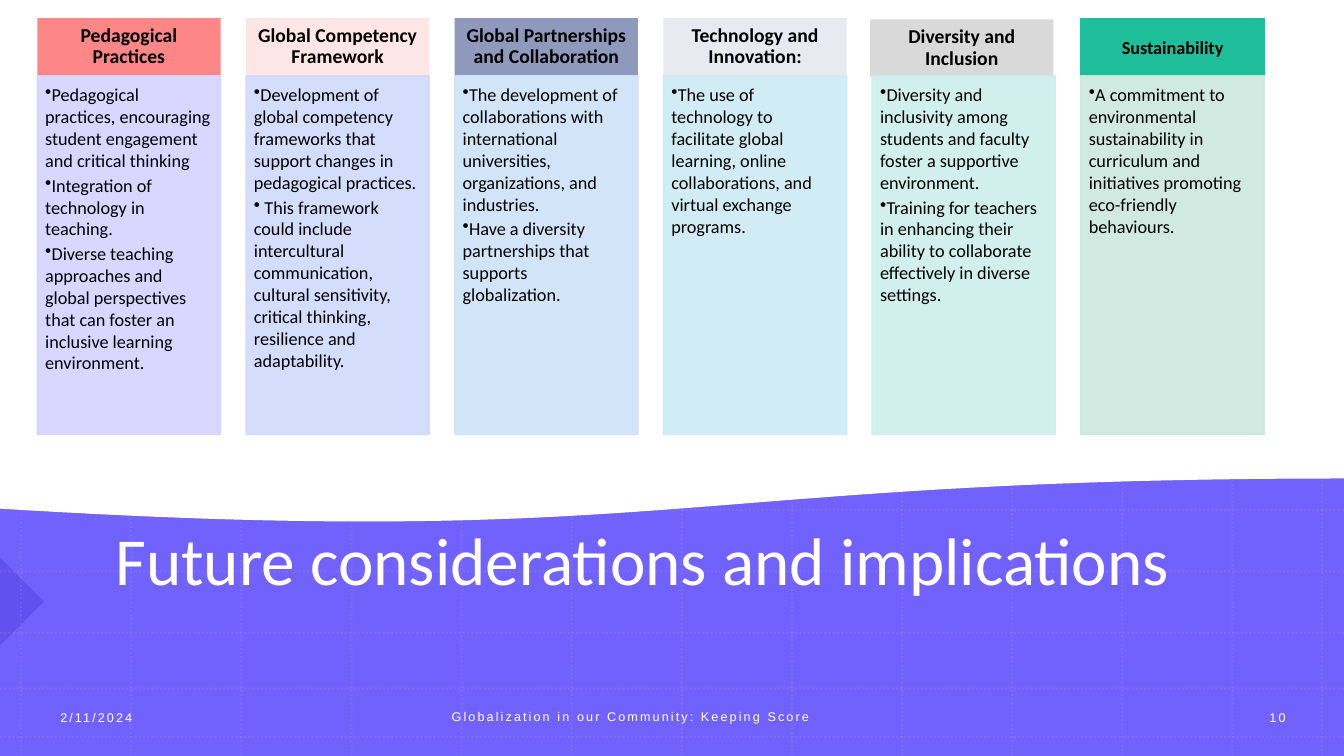
from pptx import Presentation
from pptx.dml.color import RGBColor
from pptx.enum.dml import MSO_LINE
from pptx.enum.shapes import MSO_CONNECTOR, MSO_SHAPE
from pptx.enum.text import MSO_ANCHOR, PP_ALIGN
from pptx.oxml.ns import qn
from pptx.util import Cm, Pt
from lxml import etree

RECT, TRI = MSO_SHAPE.RECTANGLE, MSO_SHAPE.RIGHT_TRIANGLE
LINE, DOT = MSO_CONNECTOR.STRAIGHT, MSO_LINE.ROUND_DOT
LEFT, MID = PP_ALIGN.LEFT, PP_ALIGN.CENTER
TOP, CENTER = MSO_ANCHOR.TOP, MSO_ANCHOR.MIDDLE

# Heading, heading fill and opacity, body fill, bullet points
COLUMNS = [
    ("Pedagogical Practices", "FD8686", 100, "D5D3FF", [
        "Pedagogical practices, encouraging student engagement and critical thinking",
        "Integration of technology in teaching.",
        "Diverse teaching approaches and global perspectives that can foster "
        "an inclusive learning environment."]),
    ("Global Competency Framework", "FD8686", 20, "D0DAFB", [
        "Development of global competency frameworks that support changes in "
        "pedagogical practices.",
        " This framework could include intercultural communication, cultural "
        "sensitivity, critical thinking, resilience and adaptability."]),
    ("Global Partnerships and Collaboration", "8F99BB", 100, "CEE3F8", [
        "The development of collaborations with international universities, "
        "organizations, and industries.",
        "Have a diversity partnerships that supports globalization."]),
    ("Technology and Innovation:", "8F99BB", 20, "CDEBF3", [
        "The use of technology to facilitate global learning, online "
        "collaborations, and virtual exchange programs."]),
    ("Diversity and Inclusion", "D9D9D9", 100, "CCEEEB", [
        "Diversity and inclusivity among students and faculty foster a "
        "supportive environment.",
        "Training for teachers in enhancing their ability to collaborate "
        "effectively in diverse settings."]),
    ("Sustainability", "1EBE9B", 100, "CCE8DE", [
        "A commitment to environmental sustainability in curriculum and "
        "initiatives promoting eco-friendly behaviours."]),
]
TITLE = "Future considerations and implications"
# Text, box in cm, alignment
FOOTER = [
    ("2/11/2024", (1.27, 17.58, 7.11, 1.02), LEFT),
    ("Globalization in our Community: Keeping Score", (9.04, 17.55, 13.69, 1.02), MID),
    ("10", (31.09, 17.58, 2.21, 1.02), MID),
]
THEME = {
    "band": "7162FE", "arrow": "1201AF", "grid": "B495C2", "paper": "FFFFFF",
    "title": {"name": "Calibri", "size": Pt(48), "color": "FFFFFF"},
    "head": {"name": "Calibri", "size": Pt(14), "bold": True, "color": "000000"},
    "short": {"name": "Calibri", "size": Pt(13), "bold": True, "color": "000000"},
    "body": {"name": "Calibri", "size": Pt(13), "color": "000000"},
    "foot": {"name": "Arial", "size": Pt(9), "color": "FFFFFF"},
}
WIDE, HIGH = 33.87, 19.05
COL_X, STEP, COL_W = 0.94, 5.26, 4.62
HEAD_Y, HEAD_H, BODY_Y, BODY_H = 0.46, 1.45, 1.91, 9.04
NUDGE = {4: (-0.05, 0.03)}
GRID_X, GRID_END, GRID_N = 0.53, 31.06, 12
ROWS = [12.85, 14.4, 15.95, 17.35, 18.57]
WAVE = [(33.91, 12.04), (17.02, 12.04), (16.92, 13.84), (0, 12.8)]
SMOOTH = 60


def paint(fill, color, alpha=100):
    """Make a solid fill with the given opacity in percent."""
    fill.solid()
    fill.fore_color.rgb = RGBColor.from_string(color)
    if alpha < 100:
        node = fill._xPr.find(qn("a:solidFill"))[0]
        etree.SubElement(node, qn("a:alpha")).set("val", str(alpha * 1000))


def block(slide, kind, box, color, alpha=100, edge=False):
    shape = slide.shapes.add_shape(kind, *map(Cm, box))
    shape.shadow.inherit = False
    paint(shape.fill, color, alpha)
    if edge:
        paint(shape.line.fill, color, alpha)
        shape.line.width = Pt(1)
    else:
        shape.line.fill.background()
    return shape


def write(shape, lines, style, para, frame):
    """Fill a shape with paragraphs; return them."""
    text = shape.text_frame
    for key, val in {"word_wrap": True, **frame}.items():
        setattr(text, key, val)
    for num, line in enumerate(lines):
        item = text.paragraphs[0] if num == 0 else text.add_paragraph()
        for key, val in para.items():
            setattr(item, key, val)
        run = item.add_run()
        run.text = line
        for key, val in style.items():
            if key == "color":
                run.font.color.rgb = RGBColor.from_string(val)
            else:
                setattr(run.font, key, val)
    return text.paragraphs


def label(slide, box, *args):
    return write(slide.shapes.add_textbox(*map(Cm, box)), *args)


def rule(slide, *ends):
    line = slide.shapes.add_connector(LINE, *map(Cm, ends))
    paint(line.line.fill, THEME["grid"], 20)
    line.line.width, line.line.dash_style = Pt(1.5), DOT
    etree.SubElement(line._element.spPr, qn("a:effectLst"))


def curve(step):
    """Point on the wave's cubic curve, in EMU."""
    t = step / SMOOTH
    parts = ((1 - t) ** 3, 3 * t * (1 - t) ** 2, 3 * t * t * (1 - t), t ** 3)
    return tuple(Cm(sum(w * p[axis] for w, p in zip(parts, WAVE))) for axis in (0, 1))


def scene(slide):
    """Purple band with a dotted grid, under a white wave."""
    block(slide, RECT, (0, 0, WIDE, HIGH), THEME["band"])
    block(slide, TRI, (-0.79, 14.38, 1.57, 1.57), THEME["arrow"], 17).rotation = 225
    gap = (GRID_END - GRID_X) / (GRID_N - 1)
    for x in [GRID_X + gap * num for num in range(GRID_N)] + [33.32]:
        rule(slide, x, 0, x, HIGH)
    for y in ROWS:
        rule(slide, 0, y, WIDE, y)
    pen = slide.shapes.build_freeform(0, 0, 1.0)
    pen.add_line_segments([(Cm(WAVE[0][0]), 0)] + [curve(n) for n in range(SMOOTH + 1)])
    wave = pen.convert_to_shape()
    wave.shadow.inherit = False
    paint(wave.fill, THEME["paper"])
    paint(wave.line.fill, THEME["paper"])
    wave.line.width = Pt(1)


def column(slide, num, head, tint, alpha, shade, points):
    x = COL_X + STEP * num
    dx, dy = NUDGE.get(num, (0, 0))
    last = num == len(COLUMNS) - 1
    card = block(slide, RECT, (x + dx, HEAD_Y + dy, COL_W, HEAD_H), tint, alpha, last)
    write(card, [head], THEME["short" if last else "head"],
          {"alignment": MID, "line_spacing": 1.0 if last else 0.9},
          {"vertical_anchor": CENTER, "margin_left": Cm(0.28), "margin_right": Cm(0.28),
           "margin_top": Cm(0.15), "margin_bottom": Cm(0.15)})
    card = block(slide, RECT, (x, BODY_Y, COL_W, BODY_H), shade, 90, True)
    items = write(card, points, THEME["body"],
                  {"alignment": LEFT, "level": 1, "space_after": Pt(2)},
                  {"vertical_anchor": TOP, "margin_left": Cm(0.2), "margin_right": Cm(0.25),
                   "margin_top": Cm(0.2), "margin_bottom": Cm(0.28)})
    for item in items:
        props = item._p.get_or_add_pPr()
        props.set("marL", "0")
        props.set("indent", str(-Cm(0.3)))
        etree.SubElement(props, qn("a:buChar")).set("char", "•")


def main():
    deck = Presentation()
    deck.slide_width, deck.slide_height = Cm(WIDE), Cm(HIGH)
    slide = deck.slides.add_slide(deck.slide_layouts[6])
    scene(slide)
    label(slide, (1.27, 12.93, 29.85, 4.42), [TITLE], THEME["title"],
          {"alignment": MID, "line_spacing": 0.9},
          {"vertical_anchor": TOP, "margin_top": Cm(0.36)})
    for num, col in enumerate(COLUMNS):
        column(slide, num, *col)
    for text, box, side in FOOTER:
        items = label(slide, box, [text], THEME["foot"], {"alignment": side},
                      {"vertical_anchor": CENTER})
        items[0].runs[0].font._element.set("spc", "150")
    deck.save("out.pptx")


if __name__ == "__main__":
    main()
